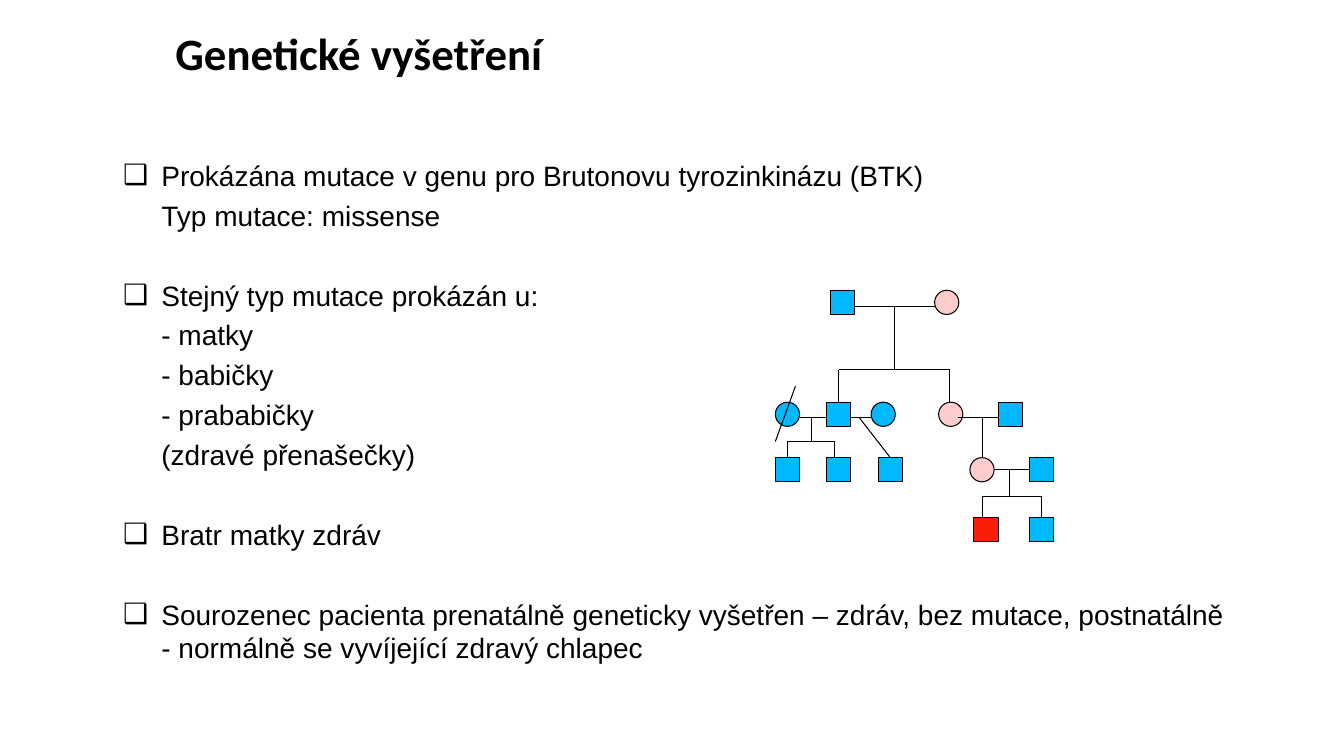
from lxml import etree
from pptx import Presentation
from pptx.dml.color import RGBColor
from pptx.enum.shapes import MSO_CONNECTOR, MSO_SHAPE
from pptx.enum.text import MSO_ANCHOR, MSO_AUTO_SIZE, PP_ALIGN
from pptx.oxml.ns import qn
from pptx.util import Emu, Pt

MALE, FEMALE = MSO_SHAPE.RECTANGLE, MSO_SHAPE.OVAL
STRAIGHT = MSO_CONNECTOR.STRAIGHT
TOP, LEFT, NO_FIT = MSO_ANCHOR.TOP, PP_ALIGN.LEFT, MSO_AUTO_SIZE.NONE

BLACK = RGBColor(0x00, 0x00, 0x00)
HEALTHY = RGBColor(0x00, 0xB8, 0xFF)
CARRIER = RGBColor(0xFF, 0xCC, 0xCC)
PATIENT = RGBColor(0xF9, 0x1E, 0x07)

PX = 9144  # 100 px to the inch
SIZE = 24  # side of a pedigree symbol
INDENT = 38
LINE_GAP, GROUP_GAP = 4.5, 33
GEN_1, GEN_2, GEN_3, GEN_4 = 288, 399, 454, 513

GROUPS = [
    ["Prokázána mutace v genu pro Brutonovu tyrozinkinázu (BTK)",
     "Typ mutace: missense"],
    ["Stejný typ mutace prokázán u:", "- matky", "- babičky",
     "- prababičky", "(zdravé přenašečky)"],
    ["Bratr matky zdráv"],
    ["Sourozenec pacienta prenatálně geneticky vyšetřen – zdráv, bez mutace, "
     "postnatálně - normálně se vyvíjející zdravý chlapec"],
]

# left, top, sex, colour
PEOPLE = [
    (824, GEN_1, MALE, HEALTHY), (927, GEN_1, FEMALE, CARRIER),
    (769, GEN_2, FEMALE, HEALTHY), (820, GEN_2, MALE, HEALTHY),
    (864, GEN_2, FEMALE, HEALTHY), (931, GEN_2, FEMALE, CARRIER),
    (990, GEN_2, MALE, HEALTHY),
    (769, GEN_3, MALE, HEALTHY), (820, GEN_3, MALE, HEALTHY),
    (871, GEN_3, MALE, HEALTHY), (962, GEN_3, FEMALE, CARRIER),
    (1021, GEN_3, MALE, HEALTHY),
    (966, GEN_4, MALE, PATIENT), (1021, GEN_4, MALE, HEALTHY),
]

# left, right, y
COUPLES = [(848, 927, 304), (793, 820, 414), (844, 864, 414),
           (950, 990, 414), (986, 1021, 466)]

# stem x, stem top, bar y, first child x, last child x, child top
SIBLINGS = [(887, 304, 367, 832, 942, GEN_2),
            (805, 414, 438, 781, 828, GEN_3),
            (1001, 466, 493, 974, 1033, GEN_4)]

ONLY_CHILDREN = [(974, 414, 974, GEN_3), (852, 414, 883, GEN_3)]
DECEASED_STROKE = (789, 383, 769, 438)


def px(*lengths):
    return [Emu(n * PX) for n in lengths]


def place(shape, *box):
    shape.left, shape.top, shape.width, shape.height = px(*box)
    tf = shape.text_frame
    tf.word_wrap, tf.auto_size, tf.vertical_anchor = True, NO_FIT, TOP
    return tf


def write(p, text, font="Arial", size=20, bold=False, before=0):
    p.alignment = LEFT
    p.space_before, p.space_after = Pt(before), Pt(0)
    r = p.add_run()
    r.text = text
    r.font.name, r.font.size, r.font.bold = font, Pt(size), bold
    r.font.color.rgb = BLACK


def set_bullet(p, char=None):
    """Indent the paragraph, with a hanging bullet if char is given."""
    pPr = p._p.get_or_add_pPr()
    pPr.set("marL", str(INDENT * PX))
    pPr.set("indent", str(-INDENT * PX if char else 0))
    if char:
        etree.SubElement(pPr, qn("a:buFont")).set("typeface", "Arial")
        etree.SubElement(pPr, qn("a:buChar")).set("char", char)
    else:
        etree.SubElement(pPr, qn("a:buNone"))


def add_findings(tf):
    p = tf.paragraphs[0]
    for g, group in enumerate(GROUPS):
        for i, text in enumerate(group):
            if g or i:
                p = tf.add_paragraph()
            write(p, text, before=LINE_GAP if i else GROUP_GAP if g else 0)
            set_bullet(p, None if i else "❑")


def add_person(s, x, y, sex, color):
    sp = s.shapes.add_shape(sex, *px(x, y, SIZE, SIZE))
    sp.shadow.inherit = False
    sp.fill.solid()
    sp.fill.fore_color.rgb = color
    sp.line.color.rgb, sp.line.width = BLACK, Pt(0.75)


def add_line(s, x1, y1, x2, y2):
    c = s.shapes.add_connector(STRAIGHT, *px(x1, y1, x2, y2))
    c.line.color.rgb, c.line.width = BLACK, Pt(0.75)
    etree.SubElement(c._element.spPr, qn("a:effectLst"))


def add_siblings(s, stem, top, bar, first, last, child_top):
    add_line(s, stem, top, stem, bar)
    add_line(s, first, bar, last, bar)
    for x in (first, last):
        add_line(s, x, bar, x, child_top)


def add_pedigree(s):
    for person in PEOPLE:
        add_person(s, *person)
    for left, right, y in COUPLES:
        add_line(s, left, y, right, y)
    for family in SIBLINGS:
        add_siblings(s, *family)
    for line in ONLY_CHILDREN + [DECEASED_STROKE]:
        add_line(s, *line)


def main():
    prs = Presentation()
    prs.slide_width, prs.slide_height = px(1333, 750)
    s = prs.slides.add_slide(prs.slide_layouts[1])
    title = place(s.shapes.title, 164, 21, 1110, 64)
    write(title.paragraphs[0], "Genetické vyšetření",
          font="Calibri", size=32, bold=True)
    add_findings(place(s.placeholders[1], 112, 152, 1123, 598))
    add_pedigree(s)
    prs.save("out.pptx")


if __name__ == "__main__":
    main()
